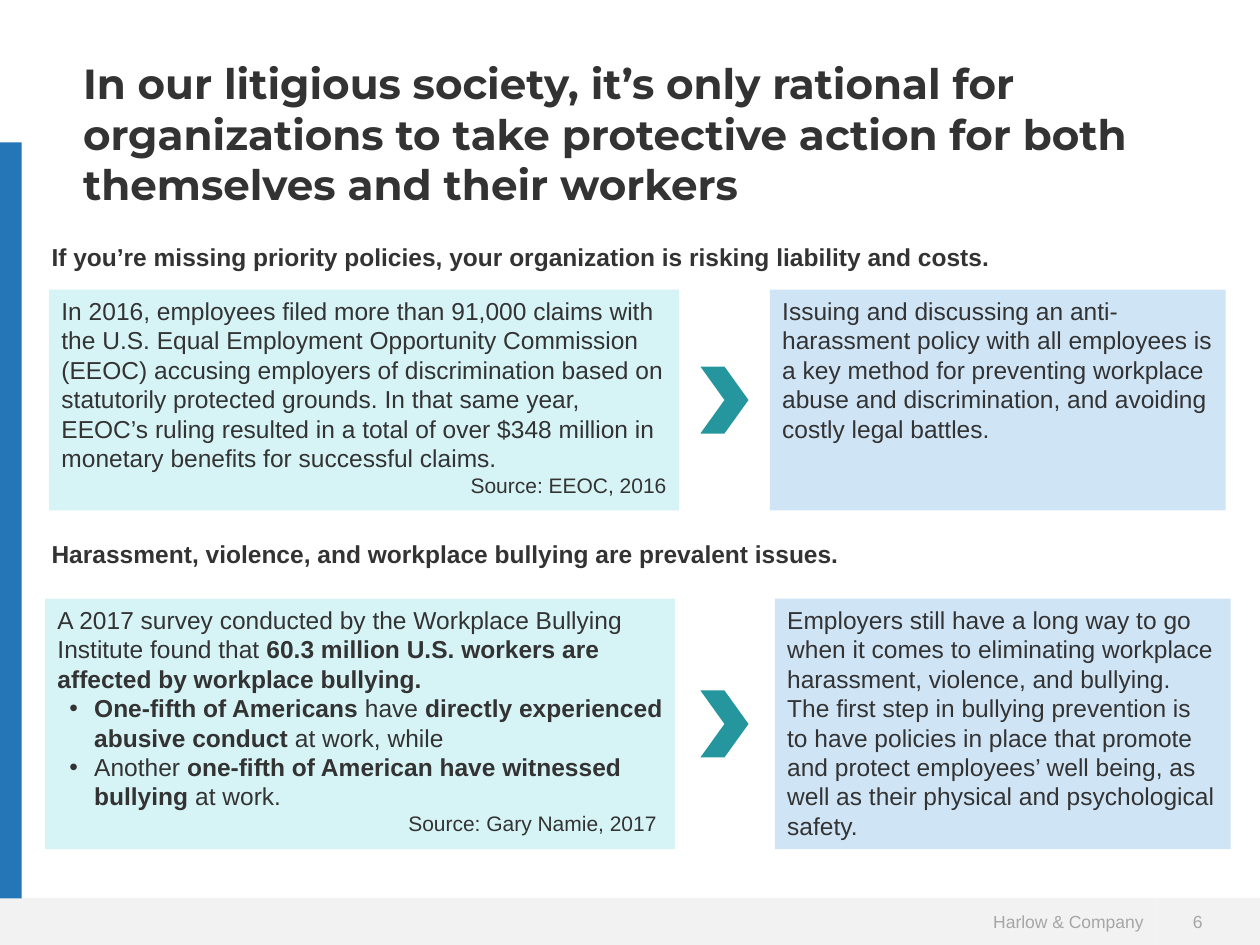
from lxml import etree
from pptx import Presentation
from pptx import util as u
from pptx.dml.color import RGBColor
from pptx.enum import shapes, text
from pptx.oxml.ns import qn

INK = RGBColor(0x33, 0x33, 0x33)
GREY = RGBColor(0xA6, 0xA6, 0xA6)
FOOTER_FILL = RGBColor(0xF2, 0xF2, 0xF2)
BLUE = RGBColor(0x25, 0x76, 0xB7)
TEAL = RGBColor(0x25, 0x96, 0x9E)
PALE_TEAL = RGBColor(0xD6, 0xF3, 0xF6)
PALE_BLUE = RGBColor(0xCF, 0xE4, 0xF5)

FACT_WIDTH = 12.7
ADVICE_WIDTH = 9.19
CHEVRON_LEFT, CHEVRON_WIDTH, CHEVRON_HEIGHT = 14.12, 0.97, 1.35


def add_filled(page, kind, box, fill):
    shape = page.shapes.add_shape(kind, *map(u.Cm, box))
    shape.shadow.inherit = False
    shape.fill.solid()
    shape.fill.fore_color.rgb = fill
    shape.line.fill.background()
    return shape


def set_font(para, size, color=INK, name="Arial", bold=False):
    para.font.size = u.Pt(size)
    para.font.name = name
    para.font.bold = bold
    para.font.color.rgb = color


def add_spans(para, spans):
    for words, bold in spans:
        span = para.add_run()
        span.text = words
        if bold:
            span.font.bold = True


def set_indent(para, left, first=0, bullet=None):
    props = para._p.get_or_add_pPr()
    props.set("marL", str(u.Cm(left)))
    props.set("indent", str(u.Cm(first)))
    if bullet:
        etree.SubElement(props, qn("a:buFont")).set("typeface", "Arial")
        etree.SubElement(props, qn("a:buChar")).set("char", bullet)


def add_panel(page, box, fill, paragraphs):
    panel = add_filled(page, shapes.MSO_SHAPE.RECTANGLE, box, fill)
    frame = panel.text_frame
    frame.word_wrap = True
    frame.vertical_anchor = text.MSO_ANCHOR.TOP
    for index, (style, spans) in enumerate(paragraphs):
        para = frame.add_paragraph() if index else frame.paragraphs[0]
        if style == "bullet":
            set_indent(para, 0.74, -0.5, "•")
        para.alignment = text.PP_ALIGN.RIGHT if style == "source" else text.PP_ALIGN.LEFT
        set_font(para, 12 if style == "source" else 14)
        add_spans(para, spans)


def add_title(page, box, words):
    title = page.shapes.title
    title.left, title.top, title.width, title.height = map(u.Cm, box)
    frame = title.text_frame
    frame.word_wrap = True
    frame.auto_size = text.MSO_AUTO_SIZE.NONE
    frame.vertical_anchor = text.MSO_ANCHOR.TOP
    para = frame.paragraphs[0]
    para.alignment = text.PP_ALIGN.LEFT
    set_font(para, 24, name="Montserrat", bold=True)
    add_spans(para, [(words, True)])


def add_heading(page, box, words):
    frame = page.shapes.add_textbox(*map(u.Cm, box)).text_frame
    frame.word_wrap = True
    para = frame.paragraphs[0]
    set_font(para, 14, bold=True)
    add_spans(para, [(words, True)])


def add_argument(page, box, advice_left, fact, advice):
    left, top, height = box
    add_panel(page, (left, top, FACT_WIDTH, height), PALE_TEAL, fact)
    add_panel(page, (advice_left, top, ADVICE_WIDTH, height), PALE_BLUE, advice)
    chevron_top = top + (height - CHEVRON_HEIGHT) / 2
    add_filled(page, shapes.MSO_SHAPE.CHEVRON,
               (CHEVRON_LEFT, chevron_top, CHEVRON_WIDTH, CHEVRON_HEIGHT), TEAL)


def add_footer(page, box, number_width, owner, number):
    left, top, width, height = box
    owner_width = width - number_width
    cells = [
        (left, owner_width, owner, text.PP_ALIGN.RIGHT, 0),
        (left + owner_width, number_width, number, text.PP_ALIGN.LEFT, 0.5),
    ]
    for cell_left, cell_width, words, alignment, indent in cells:
        cell = add_filled(page, shapes.MSO_SHAPE.RECTANGLE,
                          (cell_left, top, cell_width, height), FOOTER_FILL)
        cell.text_frame.vertical_anchor = text.MSO_ANCHOR.MIDDLE
        para = cell.text_frame.paragraphs[0]
        set_indent(para, indent)
        para.alignment = alignment
        set_font(para, 10, GREY)
        add_spans(para, [(words, False)])


def main():
    deck = Presentation()
    deck.slide_width, deck.slide_height = u.Cm(25.4), u.Cm(19.05)
    page = deck.slides.add_slide(deck.slide_layouts[5])

    add_footer(page, (0, 18.1, 25.4, 0.95), 2.1, "Harlow & Company", "6")
    add_filled(page, shapes.MSO_SHAPE.RECTANGLE, (0, 2.87, 0.44, 15.24), BLUE)
    add_title(page, (1.42, 1.04, 22.58, 3.23),
              "In our litigious society, it’s only rational for organizations to take "
              "protective action for both themselves and their workers")

    add_heading(page, (0.79, 4.75, 23.95, 0.86),
                "If you’re missing priority policies, your organization is risking "
                "liability and costs.")
    add_argument(
        page, (0.99, 5.84, 4.45), 15.52,
        [("body", [("In 2016, employees filed more than 91,000 claims with the U.S. Equal "
                    "Employment Opportunity Commission (EEOC) accusing employers of "
                    "discrimination based on statutorily protected grounds. In that same "
                    "year, EEOC’s ruling resulted in a total of over $348 million in "
                    "monetary benefits for successful claims.", False)]),
         ("source", [("Source: EEOC, 2016", False)])],
        [("body", [("Issuing and discussing an anti-harassment policy with all employees is "
                    "a key method for preventing workplace abuse and discrimination, and "
                    "avoiding costly legal battles.", False)])])

    add_heading(page, (0.79, 10.74, 23.95, 0.86),
                "Harassment, violence, and workplace bullying are prevalent issues.")
    add_argument(
        page, (0.91, 12.07, 5.05), 15.62,
        [("body", [("A 2017 survey conducted by the Workplace Bullying Institute found that ",
                    False),
                   ("60.3 million U.S. workers are affected by workplace bullying.", True)]),
         ("bullet", [("One-fifth of Americans ", True), ("have", False),
                     (" directly experienced abusive conduct ", True),
                     ("at work, while", False)]),
         ("bullet", [("Another", False),
                     (" one-fifth of American have witnessed bullying ", True),
                     ("at work.", False)]),
         ("source", [("Source: Gary Namie, 2017 ", False)])],
        [("body", [("Employers still have a long way to go when it comes to eliminating "
                    "workplace harassment, violence, and bullying. The first step in "
                    "bullying prevention is to have policies in place that promote and "
                    "protect employees’ well being, as well as their physical and "
                    "psychological safety.", False)])])

    deck.save("out.pptx")


if __name__ == "__main__":
    main()
